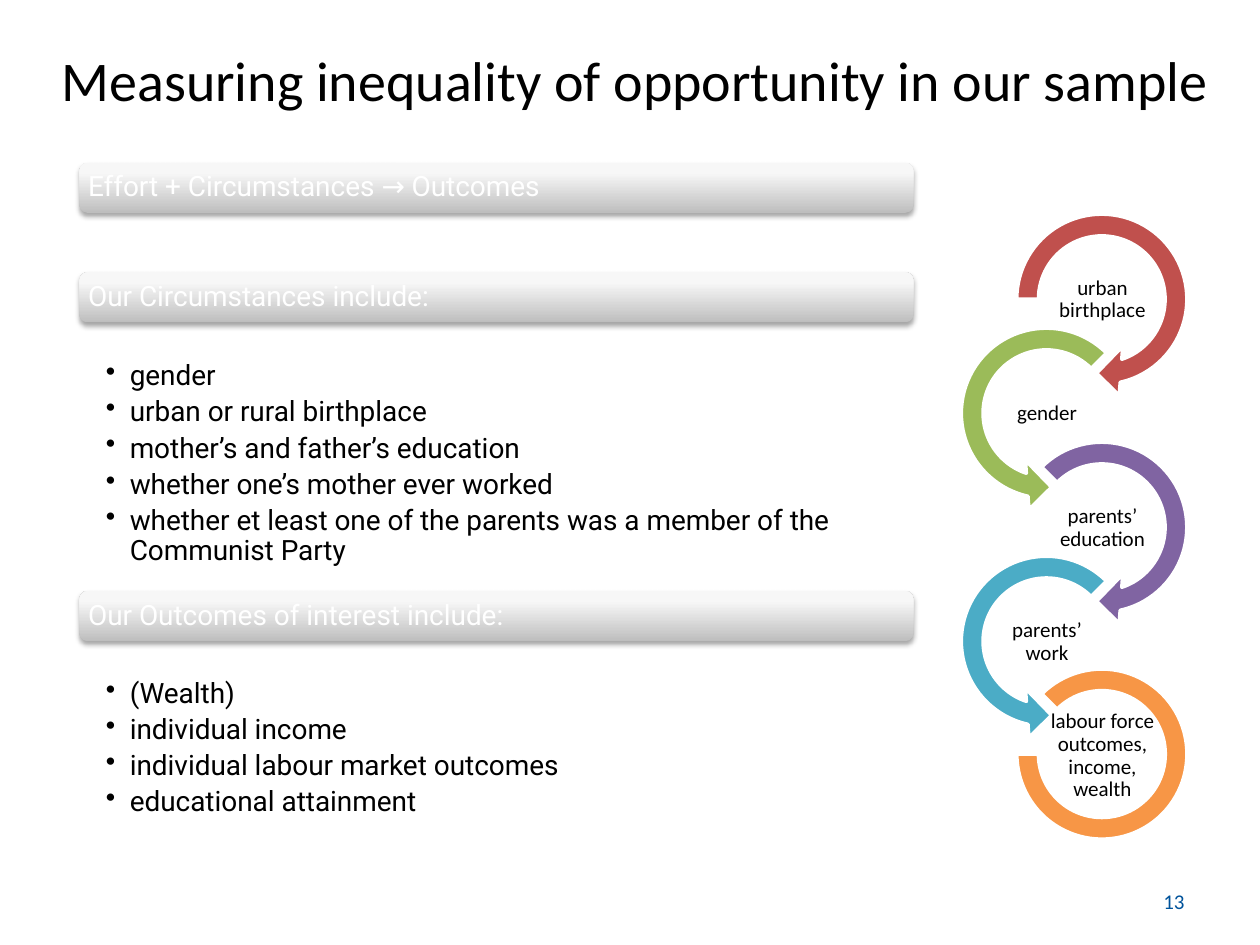
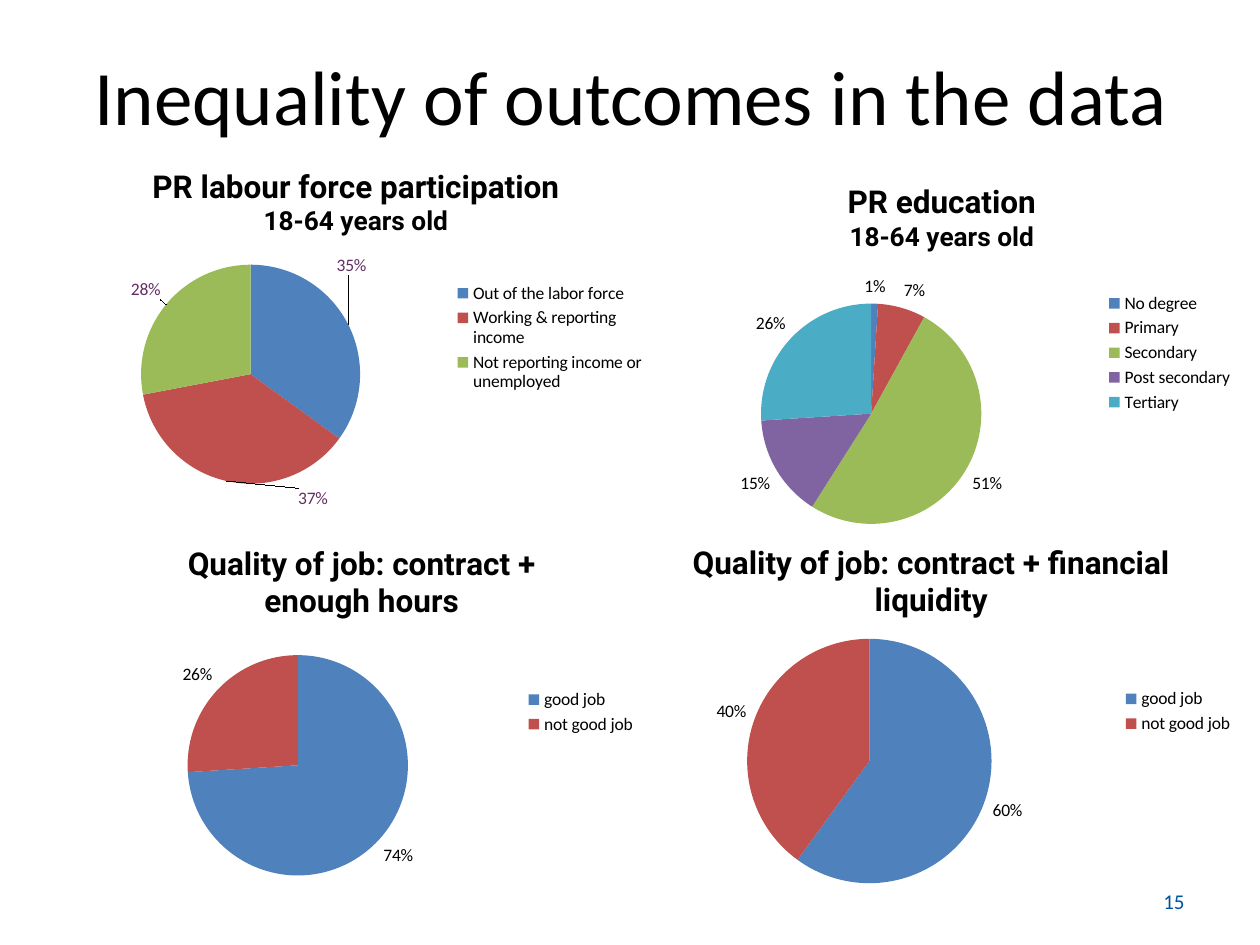
from lxml import etree
from pptx import Presentation
from pptx.chart.data import CategoryChartData
from pptx.dml.color import RGBColor
from pptx.enum.chart import XL_CHART_TYPE, XL_LABEL_POSITION, XL_LEGEND_POSITION
from pptx.enum.shapes import MSO_SHAPE
from pptx.enum.text import MSO_ANCHOR, PP_ALIGN
from pptx.oxml import parse_xml
from pptx.oxml.ns import nsdecls, qn
from pptx.util import Inches, Pt

BLACK = RGBColor(0x00, 0x00, 0x00)
WHITE = RGBColor(0xFF, 0xFF, 0xFF)
NUMBER_BLUE = RGBColor(0x00, 0x53, 0x9B)
BAR_DARK = RGBColor(0xBE, 0xBE, 0xBE)
BAR_LIGHT = RGBColor(0xF7, 0xF7, 0xF7)
PLUM = RGBColor(0x63, 0x2D, 0x62)
BLUE = RGBColor(0x4F, 0x81, 0xBD)
RED = RGBColor(0xC0, 0x50, 0x4D)
GREEN = RGBColor(0x9B, 0xBB, 0x59)
PURPLE = RGBColor(0x80, 0x64, 0xA2)
TEAL = RGBColor(0x4B, 0xAC, 0xC6)
ORANGE = RGBColor(0xF7, 0x96, 0x46)
SLICE_COLORS = [BLUE, RED, GREEN, PURPLE, TEAL]

BODY_FONT = "Calibri"
ACCENT_FONT = "Roboto"

BAR_SHADOW = (
    f'<a:outerShdw {nsdecls("a")} blurRad="39370" dist="22860" dir="5400000" rotWithShape="0">'
    '<a:srgbClr val="000000"><a:alpha val="35000"/></a:srgbClr></a:outerShdw>'
)


def manual_layout(**settings):
    """Chart layout element with the given settings, in schema order."""
    layout = etree.Element(qn("c:layout"))
    manual = etree.SubElement(layout, qn("c:manualLayout"))
    for tag, value in settings.items():
        etree.SubElement(manual, qn(f"c:{tag}")).set("val", str(value))
    return layout


class Deck:
    def __init__(self):
        self.prs = Presentation()
        self.prs.slide_width = Inches(10)
        self.prs.slide_height = Inches(7.5)
        self.slide = None

    def new_slide(self, title, title_box, title_size, number):
        self.slide = self.prs.slides.add_slide(self.prs.slide_layouts[6])
        self.text(title_box, [title], size=title_size, align=PP_ALIGN.CENTER)
        self.text((7.17, 6.95, 2.33, 0.4), [number], size=12,
                  color=NUMBER_BLUE, align=PP_ALIGN.RIGHT)

    def style_font(self, font, size, color=BLACK, name=BODY_FONT, bold=False):
        for attribute, value in {"size": Pt(size), "name": name, "bold": bold}.items():
            setattr(font, attribute, value)
        font.color.rgb = color

    def fill_frame(self, frame, lines, size, color=BLACK, font=BODY_FONT, align=PP_ALIGN.LEFT,
                   anchor=MSO_ANCHOR.MIDDLE, insets=(0.1, 0.05, 0.1, 0.05), spacing=1.0):
        frame.word_wrap = True
        frame.vertical_anchor = anchor
        for side, inset in zip(("left", "top", "right", "bottom"), insets):
            setattr(frame, f"margin_{side}", Inches(inset))
        for i, line in enumerate(lines):
            paragraph = frame.paragraphs[0] if i == 0 else frame.add_paragraph()
            paragraph.alignment = align
            paragraph.line_spacing = spacing
            run = paragraph.add_run()
            run.text = line
            self.style_font(run.font, size, color, font)

    def text(self, box, lines, **style):
        frame = self.slide.shapes.add_textbox(*map(Inches, box)).text_frame
        self.fill_frame(frame, lines, **style)
        return frame

    def shape(self, kind, box):
        shape = self.slide.shapes.add_shape(kind, *map(Inches, box))
        shape.shadow.inherit = False
        return shape

    def heading_bar(self, top, heading):
        bar = self.shape(MSO_SHAPE.ROUNDED_RECTANGLE, (0.63, top, 6.62, 0.4))
        bar.line.fill.background()
        bar.fill.gradient()
        bar.fill.gradient_angle = 90
        stops = bar.fill.gradient_stops
        for stop, position, color in zip(stops, (0, 0.8), (BAR_DARK, BAR_LIGHT)):
            stop.position = position
            stop.color.rgb = color
        bar._element.spPr.find(qn("a:effectLst")).append(parse_xml(BAR_SHADOW))
        self.fill_frame(bar.text_frame, [heading], size=16, color=WHITE, font=ACCENT_FONT,
                        insets=(0.05, 0.05, 0.05, 0.05), spacing=0.9)

    def bullets(self, top, height, items):
        frame = self.text((0.63, top, 6.62, height), items, size=16, font=ACCENT_FONT,
                          anchor=MSO_ANCHOR.TOP, insets=(0.21, 0.02, 0.12, 0.02), spacing=0.9)
        for paragraph in frame.paragraphs:
            paragraph.space_after = Pt(3.4)
            properties = paragraph._p.get_or_add_pPr()
            properties.set("marL", str(Inches(0.19)))
            properties.set("indent", str(-Inches(0.19)))
            etree.SubElement(properties, qn("a:buChar")).set("char", "•")

    def arc(self, kind, box, adjustments, color):
        arc = self.shape(kind, box)
        for i, value in enumerate(adjustments):
            arc.adjustments[i] = value
        arc.fill.solid()
        arc.fill.fore_color.rgb = color
        arc.line.color.rgb = WHITE
        arc.line.width = Pt(2)

    def pie(self, box, title, shares, circle, moved_labels=None):
        """circle is the left, top and diameter of the pie on the slide."""
        data = CategoryChartData()
        data.categories = list(shares)
        data.add_series("Series 1", list(shares.values()))
        chart = self.slide.shapes.add_chart(
            XL_CHART_TYPE.PIE, *map(Inches, box), data).chart
        self.style_font(chart.font, 10)

        # Title lines: the first larger than the second
        chart.has_title = True
        title_frame = chart.chart_title.text_frame
        for i, (line, size) in enumerate(zip(title, (18, 15))):
            paragraph = title_frame.paragraphs[0] if i == 0 else title_frame.add_paragraph()
            run = paragraph.add_run()
            run.text = line
            self.style_font(run.font, size, name=ACCENT_FONT, bold=True)

        chart.has_legend = True
        chart.legend.position = XL_LEGEND_POSITION.RIGHT
        chart.legend.include_in_layout = False

        # Place of the pie inside the chart
        left, top, width, height = box
        circle_left, circle_top, diameter = circle
        plot_area = chart._chartSpace.chart.plotArea
        for layout in plot_area.findall(qn("c:layout")):
            plot_area.remove(layout)
        plot_area.insert(0, manual_layout(
            layoutTarget="inner", xMode="edge", yMode="edge",
            x=round((circle_left - left) / width, 3), y=round((circle_top - top) / height, 3),
            w=round(diameter / width, 3), h=round(diameter / height, 3)))

        # Slices and their labels
        plot = chart.plots[0]
        plot.vary_by_categories = True
        plot.has_data_labels = True
        labels = plot.data_labels
        for attribute, value in {"show_percentage": True, "show_value": False,
                                 "number_format": "0%", "number_format_is_linked": False,
                                 "position": XL_LABEL_POSITION.OUTSIDE_END}.items():
            setattr(labels, attribute, value)
        self.style_font(labels.font, 10)
        series = plot.series[0]
        for i, color in zip(range(len(shares)), SLICE_COLORS):
            fill = series.points[i].format.fill
            fill.solid()
            fill.fore_color.rgb = color
        for i, (dx, dy) in enumerate(moved_labels or []):
            label = series.points[i].data_label
            run = label.text_frame.paragraphs[0].add_run()
            run.text = f"{list(shares.values())[i]}%"
            self.style_font(run.font, 10, PLUM)
            label.position = XL_LABEL_POSITION.OUTSIDE_END
            label._dLbl.insert(1, manual_layout(x=dx, y=dy))


def opportunity_slide(deck):
    deck.new_slide("Measuring inequality of opportunity in our sample",
                   (0.28, 0, 9.53, 1.25), 32, "13")

    # Headings with their lists
    deck.heading_bar(1.29, "Effort + Circumstances → Outcomes")
    deck.heading_bar(2.16, "Our Circumstances include:")
    deck.bullets(2.85, 1.84, [
        "gender", "urban or rural birthplace", "mother’s and father’s education",
        "whether one’s mother ever worked",
        "whether et least one of the parents was a member of the Communist Party"])
    deck.heading_bar(4.69, "Our Outcomes of interest include:")
    deck.bullets(5.37, 1.35, [
        "(Wealth)", "individual income", "individual labour market outcomes",
        "educational attainment"])

    # Chain of arrows, swinging right and left, closed by an arc
    steps = [("urban birthplace", RED), ("gender", GREEN), ("parents’ education", PURPLE),
             ("parents’ work", TEAL), ("labour force outcomes, income, wealth", ORANGE)]
    for i, (step, color) in enumerate(steps):
        left = 7.52 if i % 2 else 7.96
        drop = 0.905 * i
        if i == len(steps) - 1:
            deck.arc(MSO_SHAPE.BLOCK_ARC, (8.07, 5.31, 1.35, 1.35), (135, 108, 0.127), color)
        else:
            kind = MSO_SHAPE.LEFT_CIRCULAR_ARROW if i % 2 else MSO_SHAPE.CIRCULAR_ARROW
            end, start = (63, 189) if i % 2 else (45, 135 if i else 108)
            deck.arc(kind, (left, 1.59 + drop, 1.57, 1.57),
                     (0.11, 11.423, end, start, 0.125), color)
        deck.text((left + 0.35, 2.16 + drop, 0.88, 0.44), [step], size=12,
                  align=PP_ALIGN.CENTER, insets=(0.01,) * 4, spacing=0.9)


def outcomes_slide(deck):
    deck.new_slide("Inequality of outcomes in the data", (0.51, 0.13, 9, 1.25), 44, "15")
    deck.pie((0.43, 1.18, 4.79, 3), ["PR labour force participation", "18-64 years old"],
             {"Out of the labor force": 35, "Working & reporting income": 37,
              "Not reporting income or unemployed": 28},
             (1.12, 2.1, 1.74), moved_labels=[(-0.03, -0.12), (0.17, 0), (0, 0)])
    deck.pie((0.59, 4.15, 4.56, 3), ["Quality of job: contract + enough hours"],
             {"good job": 74, "not good job": 26}, (1.49, 5.2, 1.75))
    deck.pie((4.89, 4.14, 5, 3.01), ["Quality of job: contract + financial liquidity"],
             {"good job": 60, "not good job": 40}, (5.93, 5.07, 1.94))
    deck.pie((5.06, 1.3, 4.83, 3), ["PR education", "18-64 years old"],
             {"No degree": 1, "Primary": 7, "Secondary": 51, "Post secondary": 15,
              "Tertiary": 26}, (6.04, 2.41, 1.75))


def main():
    deck = Deck()
    opportunity_slide(deck)
    outcomes_slide(deck)
    deck.prs.save("out.pptx")


if __name__ == "__main__":
    main()
